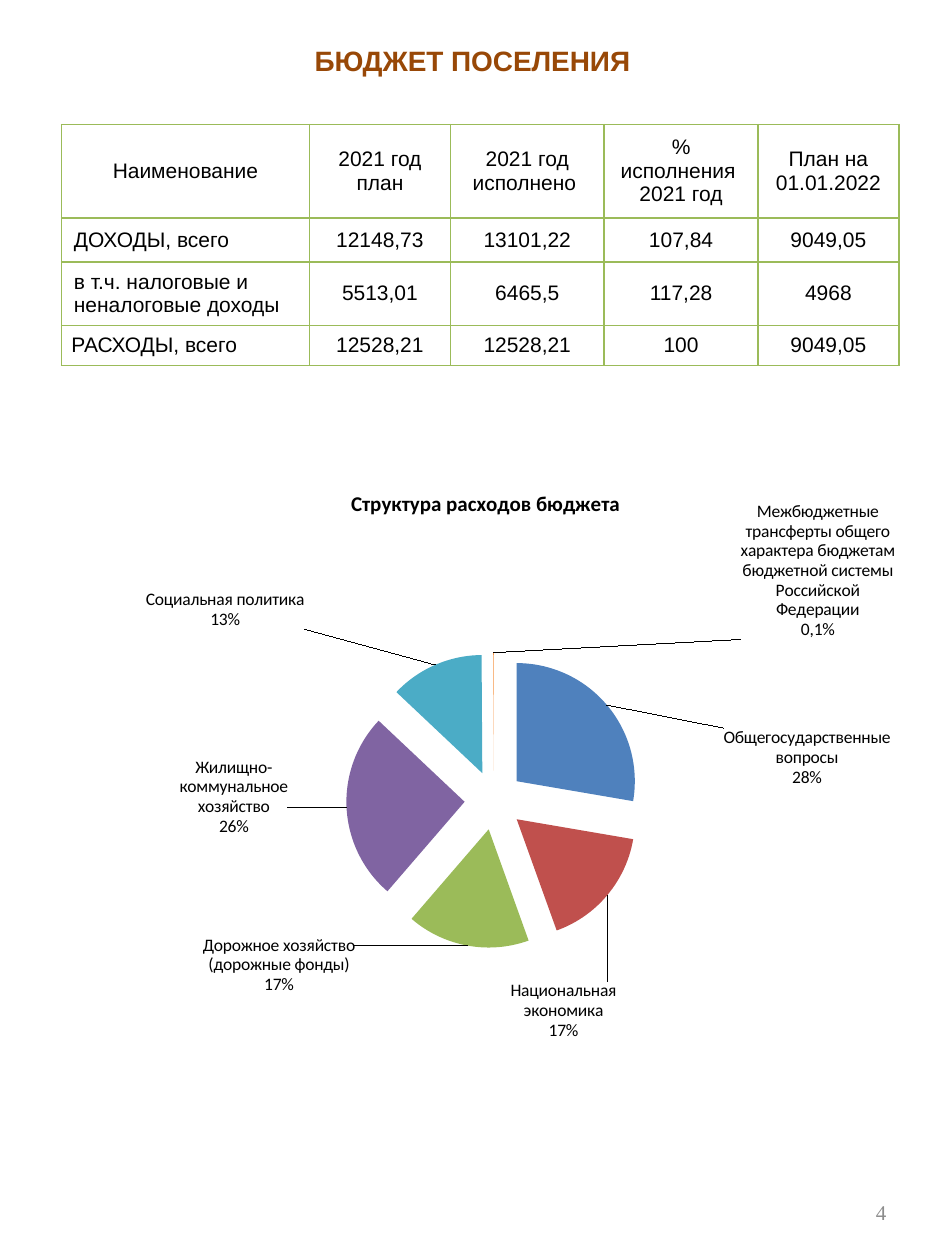
from lxml import etree
from pptx import Presentation
from pptx.chart.data import CategoryChartData
from pptx.dml.color import RGBColor
from pptx.enum.chart import XL_CHART_TYPE, XL_LABEL_POSITION
from pptx.enum.text import MSO_ANCHOR, PP_ALIGN
from pptx.oxml import parse_xml
from pptx.oxml.ns import nsdecls, qn
from pptx.util import Cm, Pt

PIE = XL_CHART_TYPE.PIE
OUTSIDE = XL_LABEL_POSITION.OUTSIDE_END
MIDDLE, TOP, BOTTOM = MSO_ANCHOR.MIDDLE, MSO_ANCHOR.TOP, MSO_ANCHOR.BOTTOM
LEFT, CENTER, RIGHT = PP_ALIGN.LEFT, PP_ALIGN.CENTER, PP_ALIGN.RIGHT

BLACK = RGBColor(0x00, 0x00, 0x00)
BROWN = RGBColor(0x98, 0x48, 0x07)
GREY = RGBColor(0x8C, 0x8C, 0x8C)
BLUE = RGBColor(0x4F, 0x81, 0xBD)
RED = RGBColor(0xC0, 0x50, 0x4D)
GREEN = RGBColor(0x9B, 0xBB, 0x59)
PURPLE = RGBColor(0x80, 0x64, 0xA2)
TEAL = RGBColor(0x4B, 0xAC, 0xC6)
ORANGE = RGBColor(0xF7, 0x96, 0x46)

BUDGET_ROWS = [
    ["Наименование", "2021 год\nплан", "2021 год\nисполнено ", "% исполнения \n2021 год", "План на 01.01.2022"],
    ["ДОХОДЫ, всего", "12148,73", "13101,22", "107,84", "9049,05"],
    ["в т.ч. налоговые и неналоговые доходы", "5513,01", "6465,5", "117,28", "4968"],
    ["РАСХОДЫ, всего", "12528,21", "12528,21", "100", "9049,05"],
]
COLUMN_WIDTHS = [5.0, 2.84, 3.1, 3.1, 2.84]
ROW_HEIGHTS = [1.88, 0.89, 1.27, 0.81]

CHART_TITLE = "Структура расходов бюджета"
EXPENSES = [
    ("Общегосударственные вопросы", 28, BLUE, (0.13, 0.15)),
    ("Национальная экономика", 17, RED, (-0.12, 0.14)),
    ("Дорожное хозяйство (дорожные фонды)", 17, GREEN, (-0.13, -0.03)),
    ("Жилищно-коммунальное хозяйство", 26, PURPLE, (-0.06, -0.02)),
    ("Социальная политика", 13, TEAL, (-0.15, -0.05)),
    ("Межбюджетные трансферты общего характера бюджетам бюджетной системы Российской Федерации",
     0.1, ORANGE, (0.38, -0.01)),
]


def style_font(font, name, size, color, bold=False):
    font.name = name
    font.size = Pt(size)
    font.color.rgb = color
    font.bold = bold


def add_text(page, box, text, align, anchor, name, size, color, bold=False):
    frame = page.shapes.add_textbox(*box).text_frame
    frame.word_wrap = True
    frame.vertical_anchor = anchor
    para = frame.paragraphs[0]
    para.text = text
    para.alignment = align
    style_font(para.font, name, size, color, bold)


def add_borders(cell):
    properties = cell._tc.get_or_add_tcPr()
    for index, side in enumerate(("lnL", "lnR", "lnT", "lnB")):
        line = parse_xml(
            f'<a:{side} {nsdecls("a")} w="{Pt(1)}"><a:solidFill>'
            f'<a:srgbClr val="{GREEN}"/></a:solidFill></a:{side}>')
        properties.insert(index, line)


def fill_cell(cell, text, align, roomy, spaced):
    cell.text = text
    cell.vertical_anchor = MIDDLE
    cell.margin_left = cell.margin_right = Cm(0.25 if roomy else 0.2)
    cell.margin_top = cell.margin_bottom = Cm(0.13 if roomy else 0)
    cell.fill.background()
    add_borders(cell)
    for para in cell.text_frame.paragraphs:
        para.alignment = align
        style_font(para.font, "Arial", 12, BLACK)
        if spaced:
            para.space_before = para.space_after = Pt(3)


def add_budget_table(page, box):
    table = page.shapes.add_table(len(BUDGET_ROWS), len(COLUMN_WIDTHS), *box).table
    table.first_row = table.horz_banding = False
    for column, width in zip(table.columns, COLUMN_WIDTHS):
        column.width = Cm(width)
    for row, height in zip(table.rows, ROW_HEIGHTS):
        row.height = Cm(height)
    last = len(BUDGET_ROWS) - 1
    for r, texts in enumerate(BUDGET_ROWS):
        for c, text in enumerate(texts):
            roomy = r == 0 or (c == 0 and r < last)
            align = LEFT if c == 0 and r > 0 else CENTER
            fill_cell(table.cell(r, c), text, align, roomy, not roomy and c < 3)


def manual_layout(**settings):
    items = "".join(f'<c:{key} val="{value}"/>' for key, value in settings.items())
    return parse_xml(
        f'<c:layout {nsdecls("c")}><c:manualLayout>{items}</c:manualLayout></c:layout>')


def show_category_and_percent(labels):
    labels.find(qn("c:showVal")).set("val", "0")
    labels.find(qn("c:showCatName")).set("val", "1")
    labels.find(qn("c:showPercent")).set("val", "1")
    separator = etree.Element(qn("c:separator"))
    separator.text = "\n"
    labels.find(qn("c:showBubbleSize")).addnext(separator)


def add_expense_chart(page, box):
    data = CategoryChartData()
    data.categories = [name for name, *_ in EXPENSES]
    data.add_series(CHART_TITLE, [value for _, value, *_ in EXPENSES])
    chart = page.shapes.add_chart(PIE, *box, data).chart
    style_font(chart.font, "Calibri", 18, BLACK)
    chart.has_legend = False
    chart.has_title = True
    title = chart.chart_title.text_frame
    title.text = CHART_TITLE
    style_font(title.paragraphs[0].runs[0].font, "Calibri", 12, BLACK, True)

    plot = chart.plots[0]
    plot.vary_by_categories = True
    series = plot.series[0]
    labels = series.data_labels
    style_font(labels.font, "Calibri", 10, BLACK)
    labels.position = OUTSIDE
    for index, (name, value, color, _) in enumerate(EXPENSES):
        point = series.points[index]
        point.format.fill.solid()
        point.format.fill.fore_color.rgb = color
        label = point.data_label
        if value < 1:
            label.text_frame.text = f"{name}\n0,1%"
            for para in label.text_frame.paragraphs:
                style_font(para.runs[0].font, "Calibri", 10, BLACK)
        else:
            style_font(label.font, "Calibri", 10, BLACK)
        label.position = OUTSIDE

    root = series._element
    explosion = etree.Element(qn("c:explosion"), val="25")
    root.find(qn("c:tx")).addnext(explosion)
    group = root.find(qn("c:dLbls"))
    for label, (*_, (x, y)) in zip(group.findall(qn("c:dLbl")), EXPENSES):
        for old in label.findall(qn("c:layout")):
            label.remove(old)
        label.insert(1, manual_layout(x=x, y=y))
        show_category_and_percent(label)
    show_category_and_percent(group)
    for old in group.findall(qn("c:showLeaderLines")):
        group.remove(old)
    group.append(etree.Element(qn("c:showLeaderLines"), val="1"))

    area = plot._element.getparent()
    for old in area.findall(qn("c:layout")):
        area.remove(old)
    area.insert(0, manual_layout(
        layoutTarget="inner", xMode="edge", yMode="edge", x=0.19, y=0.32, w=0.64, h=0.51))


def main():
    deck = Presentation()
    deck.slide_width, deck.slide_height = Cm(19.05), Cm(25.4)
    page = deck.slides.add_slide(deck.slide_layouts[6])
    add_text(page, (0, Cm(0.76), deck.slide_width, Cm(0.94)), "БЮДЖЕТ ПОСЕЛЕНИЯ",
             CENTER, TOP, "Arial", 16, BROWN, True)
    add_text(page, (Cm(13.67), Cm(23.11), Cm(4.45), Cm(1.7)), "4",
             RIGHT, BOTTOM, "Times New Roman", 12, GREY)
    add_budget_table(page, (Cm(1.24), Cm(2.51), Cm(sum(COLUMN_WIDTHS)), Cm(sum(ROW_HEIGHTS))))
    add_expense_chart(page, (Cm(1.19), Cm(9.42), Cm(17.2), Cm(11.68)))
    deck.save("out.pptx")


if __name__ == "__main__":
    main()
